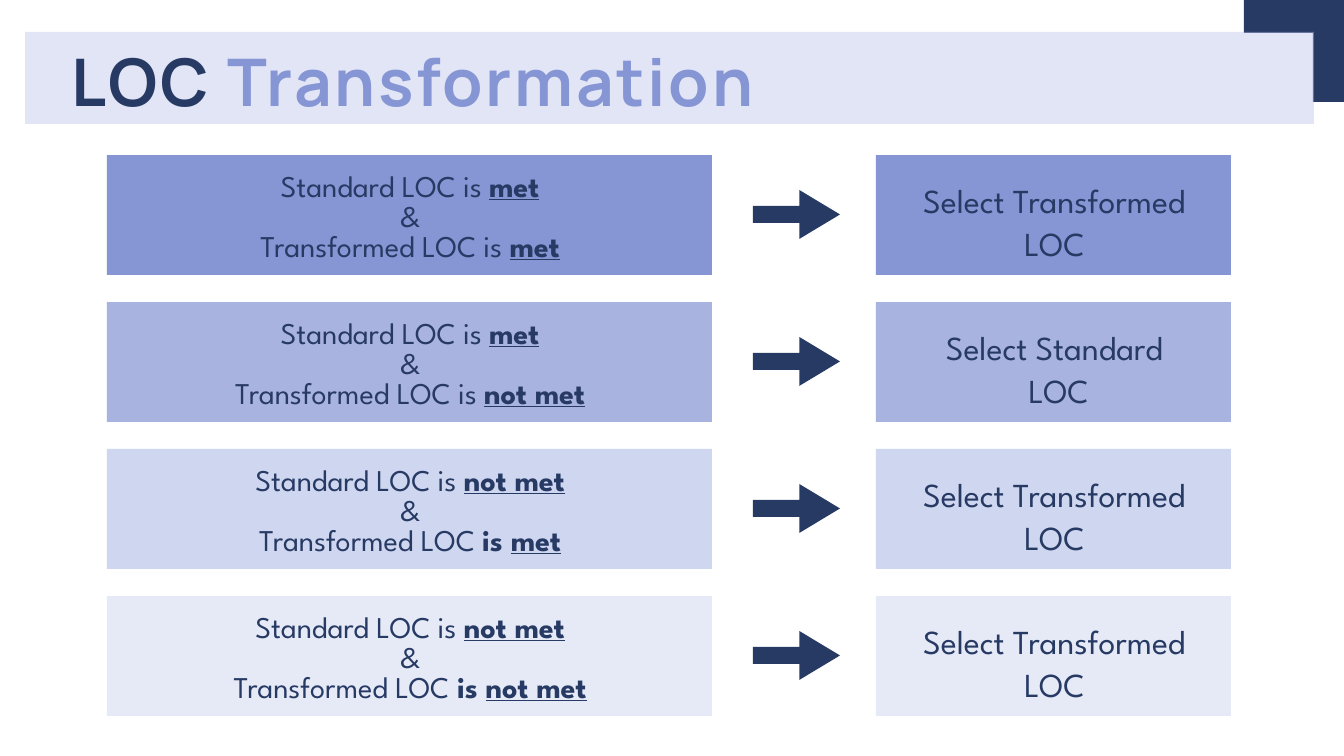
from dataclasses import dataclass

from lxml.etree import SubElement
from pptx import Presentation
from pptx.dml.color import RGBColor
from pptx.enum.shapes import MSO_SHAPE
from pptx.enum.text import MSO_ANCHOR, MSO_AUTO_SIZE, PP_ALIGN
from pptx.oxml.ns import qn
from pptx.shapes.autoshape import Shape
from pptx.slide import Slide
from pptx.text.text import TextFrame
from pptx.util import Emu, Pt

EMU_PER_PX = 914400 / 126


@dataclass(frozen=True)
class Theme:
    navy: str = "273A64"
    blue: str = "8695D4"
    pale: str = "BCC5EB"
    title_font: str = "Manrope"
    body_font: str = "League Spartan"
    title_size: float = 37.5
    title_leading: float = 41.2
    condition_size: float = 17.2
    condition_leading: float = 17.2
    result_size: float = 19.2
    result_leading: float = 25


THEME = Theme()


@dataclass(frozen=True)
class Box:
    left: int
    top: int
    width: int
    height: int

    def emu(self) -> tuple[Emu, ...]:
        return tuple(px(n) for n in (self.left, self.top, self.width, self.height))


@dataclass(frozen=True)
class Piece:
    text: str
    bold: bool = False
    underline: bool = False
    color: str = THEME.navy


@dataclass(frozen=True)
class Rule:
    """One row: two conditions, the level of care to select, and the row tint."""
    standard: list[Piece]
    transformed: list[Piece]
    result: str
    color: str
    opacity: int


def verdict(text: str) -> Piece:
    return Piece(text, bold=True, underline=True)


STANDARD = Piece("Standard LOC is ")
TRANSFORMED = Piece("Transformed LOC is ")
SELECT_TRANSFORMED = "Select Transformed LOC"

RULES = [
    Rule([STANDARD, verdict("met")], [TRANSFORMED, verdict("met")],
         SELECT_TRANSFORMED, THEME.blue, 100),
    Rule([STANDARD, verdict("met")], [TRANSFORMED, verdict("not met")],
         "Select Standard\v LOC", THEME.blue, 71),
    Rule([STANDARD, verdict("not met")],
         [Piece("Transformed LOC "), Piece("is ", bold=True), verdict("met")],
         SELECT_TRANSFORMED, THEME.pale, 70),
    Rule([STANDARD, verdict("not met")],
         [Piece("Transformed LOC"), Piece(" is ", bold=True), verdict("not met")],
         SELECT_TRANSFORMED, THEME.pale, 36),
]
FIRST_ROW_TOP = 155
ROW_PITCH = 147
ROW_HEIGHT = 120


def px(length: int) -> Emu:
    return Emu(round(length * EMU_PER_PX))


def add_filled(slide: Slide, box: Box, color: str, opacity: int = 100,
               kind: MSO_SHAPE = MSO_SHAPE.RECTANGLE) -> Shape:
    """Add a borderless shape; opacity is a percentage."""
    shape = slide.shapes.add_shape(kind, *box.emu())
    shape.shadow.inherit = False
    shape.line.fill.background()
    shape.fill.solid()
    shape.fill.fore_color.rgb = RGBColor.from_string(color)
    if opacity < 100:
        color_element = shape.fill._xPr.find(f"{qn('a:solidFill')}/{qn('a:srgbClr')}")
        SubElement(color_element, qn("a:alpha"), val=str(opacity * 1000))
    return shape


def write_text(frame: TextFrame, lines: list[list[Piece]], *, font: str, size: float,
               leading: float, align: PP_ALIGN = PP_ALIGN.CENTER,
               top_inset: int = 4, letter_spacing: float = 0) -> None:
    frame.word_wrap = True
    frame.auto_size = MSO_AUTO_SIZE.NONE
    frame.vertical_anchor = MSO_ANCHOR.TOP
    frame.margin_left = frame.margin_right = frame.margin_bottom = 0
    frame.margin_top = px(top_inset)
    for index, pieces in enumerate(lines):
        paragraph = frame.add_paragraph() if index else frame.paragraphs[0]
        paragraph.alignment = align
        paragraph.line_spacing = Pt(leading)
        paragraph.space_before = Pt(0)
        for piece in pieces:
            for part_index, part in enumerate(piece.text.split("\v")):
                if part_index:
                    paragraph.add_line_break()
                run = paragraph.add_run()
                run.text = part
                run.font.name = font
                run.font.size = Pt(size)
                run.font.bold = piece.bold
                run.font.underline = piece.underline
                run.font.color.rgb = RGBColor.from_string(piece.color)
                if letter_spacing:
                    run._r.get_or_add_rPr().set("spc", str(round(letter_spacing * 100)))


def add_header(slide: Slide) -> None:
    add_filled(slide, Box(1313, 0, 31, 102), THEME.navy)
    add_filled(slide, Box(1244, 0, 100, 33), THEME.navy)
    add_filled(slide, Box(25, 32, 1289, 92), THEME.pale, 43)
    title = slide.shapes.title
    title.left, title.top, title.width, title.height = Box(72, 40, 1040, 72).emu()
    write_text(title.text_frame,
               [[Piece("LOC ", bold=True),
                 Piece("Transformation", bold=True, color=THEME.blue)]],
               font=THEME.title_font, size=THEME.title_size,
               leading=THEME.title_leading, align=PP_ALIGN.LEFT,
               top_inset=8, letter_spacing=1.5)
    # The title placeholder starts at the back; bring it in front of its band.
    title.element.getparent().append(title.element)


def add_rule(slide: Slide, rule: Rule, top: int) -> None:
    add_filled(slide, Box(107, top, 605, ROW_HEIGHT), rule.color, rule.opacity)
    add_filled(slide, Box(876, top, 355, ROW_HEIGHT), rule.color, rule.opacity)

    arrow = add_filled(slide, Box(753, top + 35, 87, 49), THEME.navy,
                       kind=MSO_SHAPE.RIGHT_ARROW)
    arrow.adjustments[0] = 0.35
    arrow.adjustments[1] = 0.83

    condition = slide.shapes.add_textbox(*Box(124, top + 14, 572, 91).emu())
    write_text(condition.text_frame,
               [rule.standard, [Piece("&")], rule.transformed],
               font=THEME.body_font, size=THEME.condition_size,
               leading=THEME.condition_leading)
    result = slide.shapes.add_textbox(*Box(891, top + 17, 327, 87).emu())
    write_text(result.text_frame, [[Piece(rule.result)]],
               font=THEME.body_font, size=THEME.result_size,
               leading=THEME.result_leading)


def main() -> None:
    presentation = Presentation()
    presentation.slide_width = px(1344)
    presentation.slide_height = px(756)
    slide = presentation.slides.add_slide(presentation.slide_layouts.get_by_name("Title Only"))
    add_header(slide)
    for index, rule in enumerate(RULES):
        add_rule(slide, rule, FIRST_ROW_TOP + index * ROW_PITCH)
    presentation.save("out.pptx")


if __name__ == "__main__":
    main()
